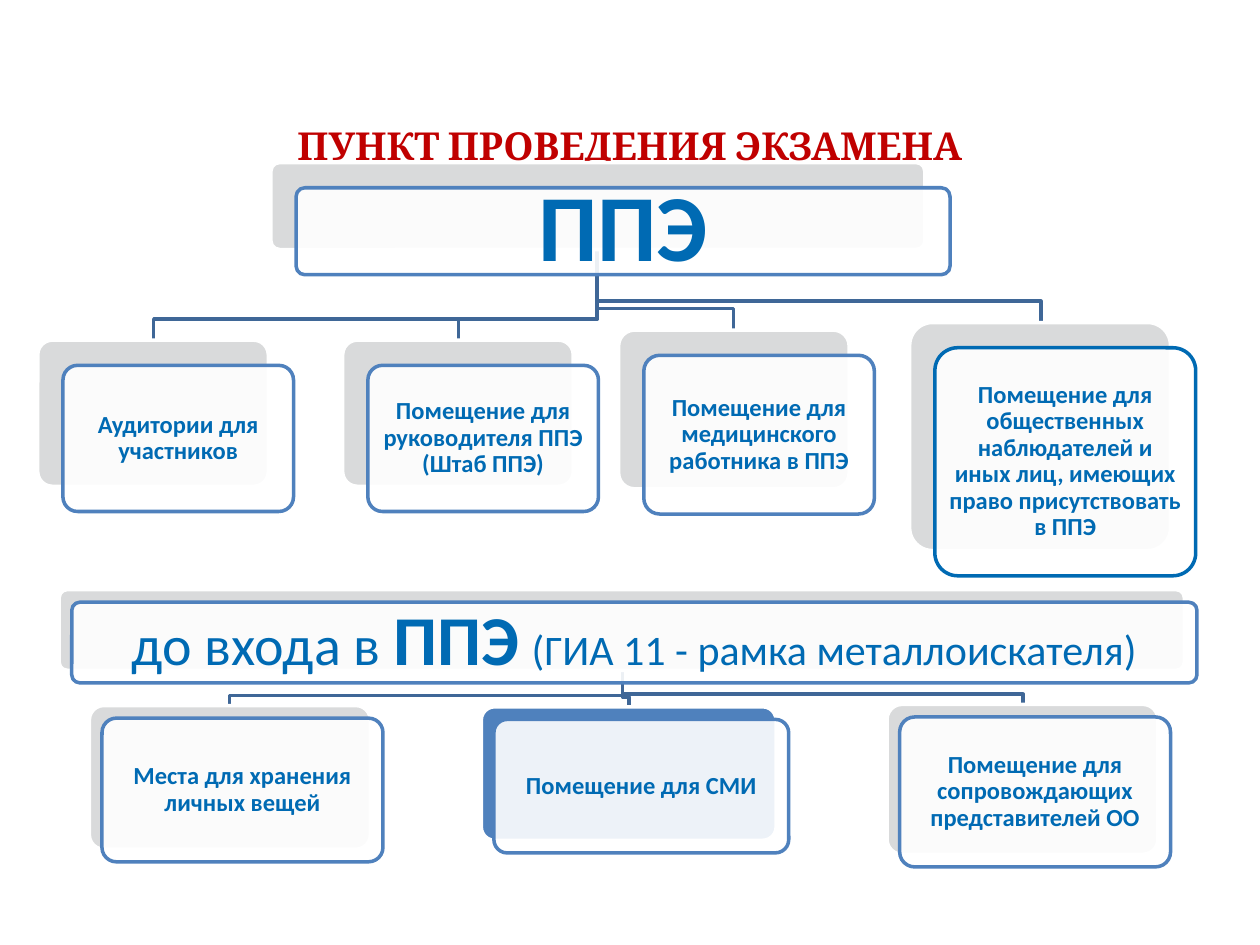
from lxml import etree
from pptx import Presentation
from pptx.dml.color import RGBColor
from pptx.enum.shapes import MSO_SHAPE
from pptx.enum.text import MSO_ANCHOR, PP_ALIGN
from pptx.oxml.ns import qn
from pptx.util import Pt

PX = 9144
ROUNDED = MSO_SHAPE.ROUNDED_RECTANGLE
MIDDLE = MSO_ANCHOR.MIDDLE
CENTER = PP_ALIGN.CENTER

WHITE = RGBColor(0xFF, 0xFF, 0xFF)
RED = RGBColor(0xC0, 0x00, 0x00)
GREY = RGBColor(0xD9, 0xDA, 0xDB)
BLUE = RGBColor(0x4F, 0x81, 0xBD)
DEEP_BLUE = RGBColor(0x00, 0x6A, 0xB3)
LINK_BLUE = RGBColor(0x3F, 0x67, 0x97)


def add_span(para, text, size, bold, color=DEEP_BLUE, font="Calibri"):
    """Append one formatted run to a paragraph."""
    span = para.add_run()
    span.text = text
    span.font.name = font
    span.font.size = Pt(size)
    span.font.bold = bold
    span.font.color.rgb = color


def add_title(page, text, left, top, width, height):
    """Place the heading in the title placeholder."""
    title = page.shapes.title
    title.left, title.top = left * PX, top * PX
    title.width, title.height = width * PX, height * PX
    frame = title.text_frame
    frame.vertical_anchor = MIDDLE
    para = frame.paragraphs[0]
    para.alignment = CENTER
    add_span(para, text, 22, True, RED, "Cambria")


def add_panel(page, box, fill, outline):
    """Draw one rounded rectangle and return it."""
    panel = page.shapes.add_shape(ROUNDED, *(value * PX for value in box))
    panel.adjustments[0] = 0.1
    panel.shadow.inherit = False
    panel.fill.solid()
    panel.fill.fore_color.rgb = fill
    panel.line.color.rgb = outline
    panel.line.width = Pt(2)
    return panel


def add_card(page, box, shift, spans, inset=6, back=GREY, outline=BLUE):
    """Draw a backing panel with a translucent text panel shifted over it."""
    left, top, width, height = box
    add_panel(page, box, back, WHITE)
    front = add_panel(page, (left + shift, top + shift, width, height), WHITE, outline)
    color = front.fill._xPr.find(qn("a:solidFill"))[0]
    etree.SubElement(color, qn("a:alpha"), val="90000")
    frame = front.text_frame
    frame.word_wrap = True
    frame.vertical_anchor = MIDDLE
    frame.margin_left = frame.margin_right = inset * PX
    frame.margin_top = frame.margin_bottom = inset * PX
    para = frame.paragraphs[0]
    para.alignment = CENTER
    para.line_spacing = 0.9
    for text, size, bold in spans:
        add_span(para, text, size, bold)


def add_link(page, root, child, drop):
    """Draw an elbow line from the root's bottom to the child's top."""
    start_x, start_y = root[0] + root[2] / 2, root[1] + root[3]
    end_x, end_y = child[0] + child[2] / 2, child[1]
    bend_y = end_y - drop
    builder = page.shapes.build_freeform(start_x, start_y, scale=PX)
    points = [(start_x, bend_y), (end_x, bend_y), (end_x, end_y)]
    builder.add_line_segments(points, close=False)
    link = builder.convert_to_shape()
    link.shadow.inherit = False
    link.fill.background()
    link.line.color.rgb = LINK_BLUE
    link.line.width = Pt(2)


def add_tree(page, left, top, root_box, root_spans, root_inset, children, shift, drop):
    """Draw a root card and its linked children relative to the tree's corner."""
    def place(box):
        """Turn a box inside the tree into a box on the page."""
        return left + box[0], top + box[1], box[2], box[3]

    root = place(root_box)
    for box, _, _ in reversed(children):
        add_link(page, root, place(box), drop)
    add_card(page, root, shift, root_spans, root_inset)
    for box, text, style in children:
        add_card(page, place(box), shift, [(text, 14, True)], **style)


def main():
    """Build the slide and save it."""
    deck = Presentation()
    deck.slide_width, deck.slide_height = 1000 * PX, 750 * PX
    page = deck.slides.add_slide(deck.slide_layouts[5])
    add_title(page, "ПУНКТ ПРОВЕДЕНИЯ ЭКЗАМЕНА", 50, 76, 900, 79)
    rooms = [
        ((0, 141, 183, 116), "Аудитории для участников", {}),
        ((242, 141, 183, 116), "Помещение для руководителя ППЭ (Штаб ППЭ)", {}),
        ((461, 133, 183, 126), "Помещение для медицинского работника в ППЭ", {}),
        ((692, 127, 207, 181),
         "Помещение для общественных наблюдателей и иных лиц, "
         "имеющих право присутствовать в ППЭ", {"outline": DEEP_BLUE}),
    ]
    add_tree(page, 30, 129, (185, 0, 519, 69), [("ППЭ", 54, True)], 23,
             rooms, shift=20, drop=17)
    entrance = [
        ("до входа в ", 32, False),
        ("ППЭ", 40, True),
        (" ", 32, False),
        ("(ГИА 11 - рамка металлоискателя)", 24, False),
    ]
    outside = [
        ((24, 92, 223, 114), "Места для хранения личных вещей", {}),
        ((335, 93, 234, 106), "Помещение для СМИ", {"back": BLUE}),
        ((657, 91, 215, 119), "Помещение для сопровождающих представителей ОО", {}),
    ]
    add_tree(page, 47, 468, (0, 0, 893, 64), entrance, 13,
             outside, shift=10, drop=8)
    deck.save("out.pptx")


if __name__ == "__main__":
    main()
